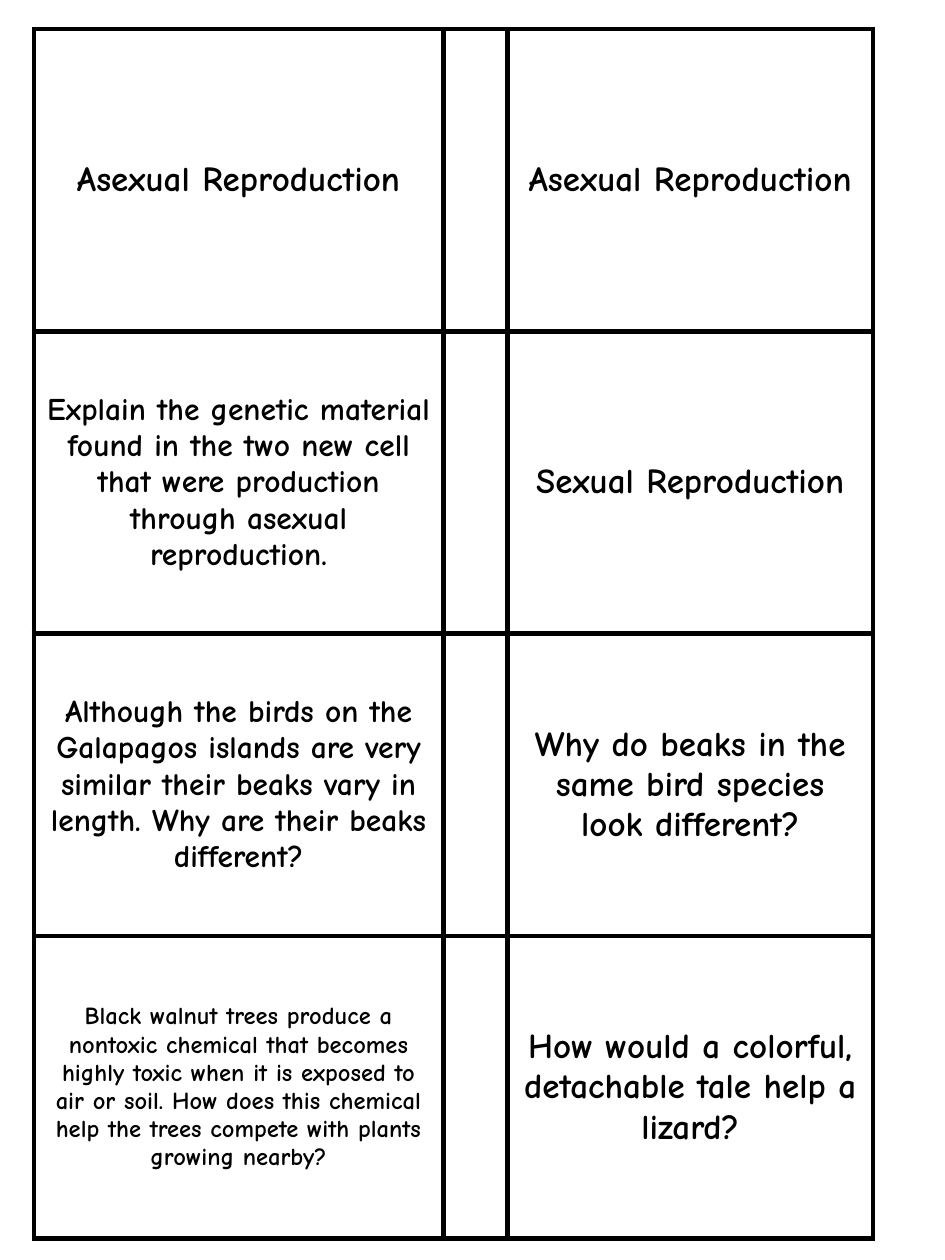
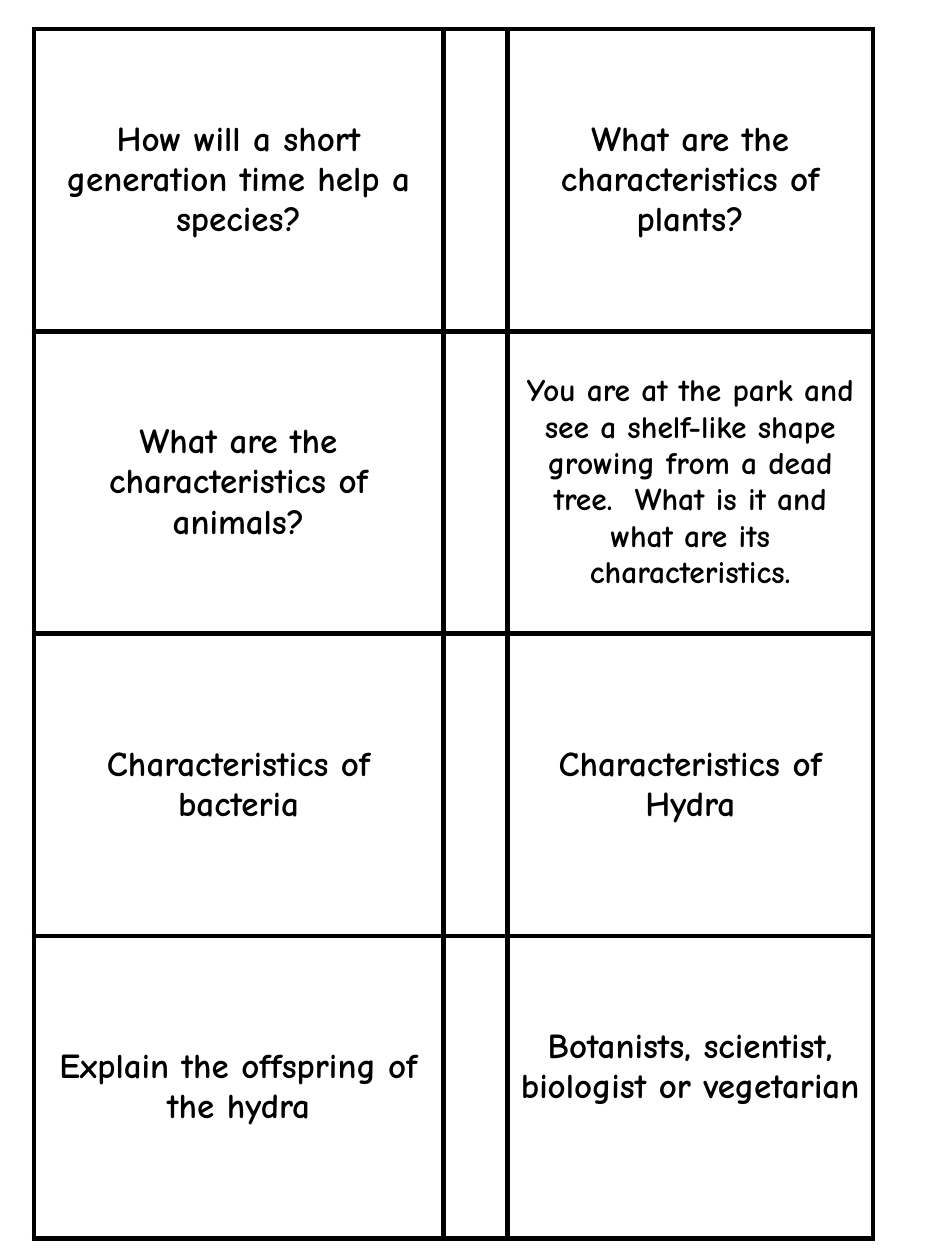
from lxml import etree
from pptx import Presentation
from pptx import util as u
from pptx.dml.color import RGBColor
from pptx.enum import text
from pptx.oxml.ns import qn

# Card grid, in percent of the slide's width and height
LEFT, TOP = 3.6, 2.3
COLUMNS = (43.3, 6.8, 38.7)  # card, gutter, card
ROW = 24
LARGE, MEDIUM, SMALL = 20, 18, 14

# Each card: wording, text size, and optionally extra room below in percent
CARD_SHEETS = [
    [
        [("Asexual Reproduction", LARGE), ("Asexual Reproduction", LARGE)],
        [("Explain the genetic material found in the two new cell that were "
          "production through asexual reproduction.", MEDIUM),
         ("Sexual Reproduction", LARGE)],
        [("Although the birds on the Galapagos islands are very similar their "
          "beaks vary in length. Why are their beaks different?", MEDIUM),
         ("Why do beaks in the same bird species look different?", LARGE)],
        [("Black walnut trees produce a nontoxic chemical that becomes highly "
          "toxic when it is exposed to air or soil. How does this chemical "
          "help the trees compete with plants growing nearby?", SMALL),
         ("How would a colorful, detachable tale help a lizard?", LARGE)],
    ],
    [
        [("How will a short generation time help a species?", LARGE),
         ("What are the characteristics of plants?", LARGE)],
        [("What are the characteristics of animals?", LARGE),
         ("You are at the park and see a shelf-like shape growing from a dead "
          "tree.  What is it and what are its characteristics.", MEDIUM)],
        [("Characteristics of bacteria", LARGE),
         ("Characteristics of Hydra", LARGE)],
        [("Explain the offspring of the hydra", LARGE),
         ("Botanists, scientist, biologist or vegetarian", LARGE, 3.7)],
    ],
]


def colour(value):
    return RGBColor.from_string(value)


class CardDeck:
    font = "Comic Neue"
    ink = "000000"
    border = u.Pt(3)

    def __init__(self):
        self.deck = Presentation()
        self.deck.slide_width = u.Inches(7.5)
        self.deck.slide_height = u.Inches(10)
        self.slide = None

    def x(self, percent):
        return round(self.deck.slide_width * percent / 100)

    def y(self, percent):
        return round(self.deck.slide_height * percent / 100)

    def new_slide(self):
        self.slide = self.deck.slides.add_slide(self.deck.slide_layouts[6])

    def outline(self, cell):
        """Draw all four borders; they must precede the fill in the XML."""
        properties = cell._tc.get_or_add_tcPr()
        for position, side in enumerate(("lnL", "lnR", "lnT", "lnB")):
            line = etree.Element(qn(f"a:{side}"), w=str(self.border))
            fill = etree.SubElement(line, qn("a:solidFill"))
            etree.SubElement(fill, qn("a:srgbClr"), val=self.ink)
            properties.insert(position, line)

    def card(self, cell, wording, size, room_below=None):
        cell.vertical_anchor = text.MSO_ANCHOR.MIDDLE
        if room_below:
            cell.margin_bottom = self.y(room_below)
        paragraph = cell.text_frame.paragraphs[0]
        paragraph.alignment = text.PP_ALIGN.CENTER
        run = paragraph.add_run()
        run.text = wording
        run.font.name = self.font
        run.font.size = u.Pt(size)
        run.font.bold = True
        run.font.color.rgb = colour(self.ink)

    def card_table(self, card_rows):
        table = self.slide.shapes.add_table(
            len(card_rows), len(COLUMNS), self.x(LEFT), self.y(TOP),
            self.x(sum(COLUMNS)), self.y(ROW * len(card_rows))).table
        table.first_row = table.horz_banding = False
        for column, width in zip(table.columns, COLUMNS):
            column.width = self.x(width)
        for row in table.rows:
            row.height = self.y(ROW)
        for cell in table.iter_cells():
            cell.fill.background()
            self.outline(cell)
        # Cards sit on either side of the empty gutter
        for row, pair in enumerate(card_rows):
            for column, card in zip((0, 2), pair):
                self.card(table.cell(row, column), *card)


def main():
    cards = CardDeck()
    for card_rows in CARD_SHEETS:
        cards.new_slide()
        cards.card_table(card_rows)
    cards.deck.save("out.pptx")


if __name__ == "__main__":
    main()
